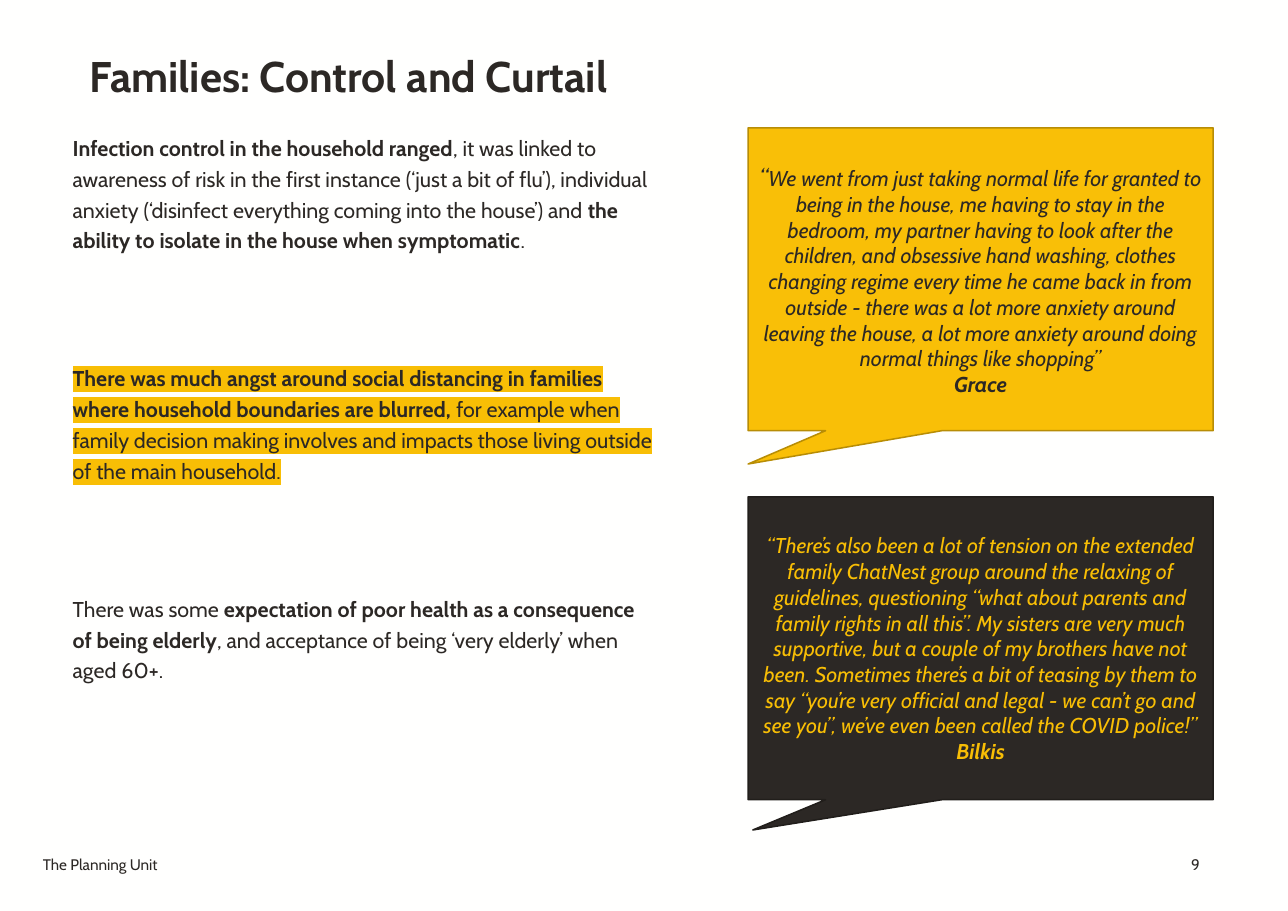
"""Build the slide on how families controlled infection and curtailed contact."""
from dataclasses import dataclass, field
from typing import Any, NamedTuple

from lxml.etree import SubElement
from pptx import Presentation
from pptx.dml.color import RGBColor
from pptx.enum.shapes import MSO_SHAPE as Shape
from pptx.enum.text import MSO_ANCHOR as Anchor, MSO_AUTO_SIZE as AutoSize, PP_ALIGN as Align
from pptx.oxml.ns import qn
from pptx.util import Inches, Pt


@dataclass(frozen=True)
class Theme:
    font: str = "Cabin"
    page: str = "FFFFFE"
    ink: str = "2C2825"
    ink_edge: str = "211E1B"
    amber: str = "F9BF07"
    amber_edge: str = "B88D05"
    highlight: str = "F8BE05"
    title_size: int = 28
    opening_size: int = 16
    body_size: int = 14
    footer_size: int = 10
    inset: float = 0.08


THEME = Theme()


class Box(NamedTuple):
    left: float
    top: float
    width: float
    height: float


class Words(NamedTuple):
    text: str
    size: int = THEME.body_size
    bold: bool = False
    italic: bool = False
    color: str = THEME.ink
    highlight: str | None = None


@dataclass
class TextBlock:
    box: Box
    paragraphs: list[list[Words]]
    format: dict[str, Any] = field(default_factory=dict)


@dataclass
class Callout:
    box: Box
    tail: tuple[float, float]
    fill: str
    edge: str
    paragraphs: list[list[Words]]


def quote(text: str, color: str = THEME.ink, size: int = THEME.body_size, bold: bool = False) -> Words:
    """Return words in the italic style of the quotations."""
    return Words(text, size, bold, True, color)


TITLE = TextBlock(
    Box(0.73, 0.43, 10.24, 0.57),
    [[Words("Families: Control and Curtail", THEME.title_size, True)]],
    {"alignment": Align.LEFT},
)
TEXT_BLOCKS = [
    TextBlock(
        Box(0.58, 1.1, 5.47, 6.06),
        [
            [
                Words("Infection control in the household ranged", bold=True),
                Words(", it was linked to awareness of risk in the first instance (‘just a bit of flu’), "
                      "individual anxiety (‘disinfect everything coming into the house’) and "),
                Words("the ability to isolate in the house when symptomatic", bold=True),
                Words("."),
            ],
            [
                Words("There was much angst around social distancing in families where household "
                      "boundaries are blurred, ", bold=True, highlight=THEME.highlight),
                Words("for example when family decision making involves and impacts those living "
                      "outside of the main household.", highlight=THEME.highlight),
            ],
            [
                Words("There was some "),
                Words("expectation of poor health as a consequence of being elderly", bold=True),
                Words(", and acceptance of being ‘very elderly’ when aged 60+."),
            ],
        ],
        {"line_spacing": 1.2, "space_before": Pt(0), "space_after": Pt(70)},
    ),
    TextBlock(
        Box(10.18, 7.68, 0.79, 0.4),
        [[Words("9", THEME.footer_size)]],
        {"alignment": Align.RIGHT},
    ),
    TextBlock(Box(0.31, 7.68, 1.28, 0.4), [[Words("The Planning Unit", THEME.footer_size)]]),
]
CALLOUTS = [
    Callout(
        Box(6.79, 1.16, 4.22, 2.75), (-0.5, 0.61), THEME.amber, THEME.amber_edge,
        [
            [
                quote("“", size=THEME.opening_size),
                quote("We went from just taking normal life for granted to being in the house, me having "
                      "to stay in the bedroom, my partner having to look after the children, and obsessive "
                      "hand washing, clothes changing regime every time he came back in from outside - "
                      "there was a lot more anxiety around leaving the house, a lot more anxiety around "
                      "doing normal things like shopping”"),
            ],
            [quote("Grace", bold=True)],
        ],
    ),
    Callout(
        Box(6.79, 4.51, 4.22, 2.75), (-0.49, 0.6), THEME.ink, THEME.ink_edge,
        [
            [quote("“There’s also been a lot of tension on the extended family ChatNest group around the "
                   "relaxing of guidelines, questioning “what about parents and family rights in all this”. "
                   "My sisters are very much supportive, but a couple of my brothers have not been. "
                   "Sometimes there’s a bit of teasing by them to say “you’re very official and legal - "
                   "we can’t go and see you”, we’ve even been called the COVID police!”",
                   THEME.highlight)],
            [quote("Bilkis", THEME.highlight, bold=True)],
        ],
    ),
]


def apply_format(target: Any, values: dict[str, Any]) -> None:
    """Set each named attribute on the target."""
    for name, value in values.items():
        setattr(target, name, value)


def add_words(paragraph: Any, words: Words) -> None:
    """Append one styled run to a paragraph."""
    run = paragraph.add_run()
    run.text = words.text
    apply_format(run.font, {"name": THEME.font, "size": Pt(words.size),
                            "bold": words.bold, "italic": words.italic})
    run.font.color.rgb = RGBColor.from_string(words.color)
    if words.highlight:
        properties = run.font._element
        highlight = SubElement(properties, qn("a:highlight"))
        SubElement(highlight, qn("a:srgbClr"), val=words.highlight)
        properties.find(qn("a:solidFill")).addnext(highlight)


def write_paragraphs(frame: Any, paragraphs: list[list[Words]], values: dict[str, Any]) -> None:
    """Fill a text frame with formatted paragraphs."""
    for index, line in enumerate(paragraphs):
        paragraph = frame.add_paragraph() if index else frame.paragraphs[0]
        apply_format(paragraph, values)
        for words in line:
            add_words(paragraph, words)


def write_block(shape: Any, block: TextBlock, anchor: Anchor = Anchor.TOP) -> None:
    """Format a plain text shape and write its block."""
    inset = Inches(THEME.inset)
    apply_format(shape.text_frame, {
        "word_wrap": True, "auto_size": AutoSize.NONE, "vertical_anchor": anchor,
        "margin_left": inset, "margin_right": inset, "margin_top": inset, "margin_bottom": inset,
    })
    write_paragraphs(shape.text_frame, block.paragraphs, block.format)


def add_callout(slide: Any, callout: Callout) -> None:
    """Draw a speech callout with its quotation."""
    shape = slide.shapes.add_shape(Shape.RECTANGULAR_CALLOUT, *map(Inches, callout.box))
    shape.shadow.inherit = False
    for index, position in enumerate(callout.tail):
        shape.adjustments[index] = position
    shape.fill.solid()
    shape.fill.fore_color.rgb = RGBColor.from_string(callout.fill)
    shape.line.color.rgb = RGBColor.from_string(callout.edge)
    shape.line.width = Pt(1)
    apply_format(shape.text_frame, {"word_wrap": True, "vertical_anchor": Anchor.MIDDLE})
    write_paragraphs(shape.text_frame, callout.paragraphs, {"alignment": Align.CENTER})


def main() -> None:
    """Build and save the presentation."""
    presentation = Presentation()
    apply_format(presentation, {"slide_width": Inches(11.69), "slide_height": Inches(8.27)})
    slide = presentation.slides.add_slide(presentation.slide_layouts[5])
    slide.background.fill.solid()
    slide.background.fill.fore_color.rgb = RGBColor.from_string(THEME.page)
    title = slide.shapes.title
    apply_format(title, dict(zip(Box._fields, map(Inches, TITLE.box))))
    write_block(title, TITLE, Anchor.BOTTOM)
    for block in TEXT_BLOCKS:
        write_block(slide.shapes.add_textbox(*map(Inches, block.box)), block)
    for callout in CALLOUTS:
        add_callout(slide, callout)
    presentation.save("out.pptx")


if __name__ == "__main__":
    main()
